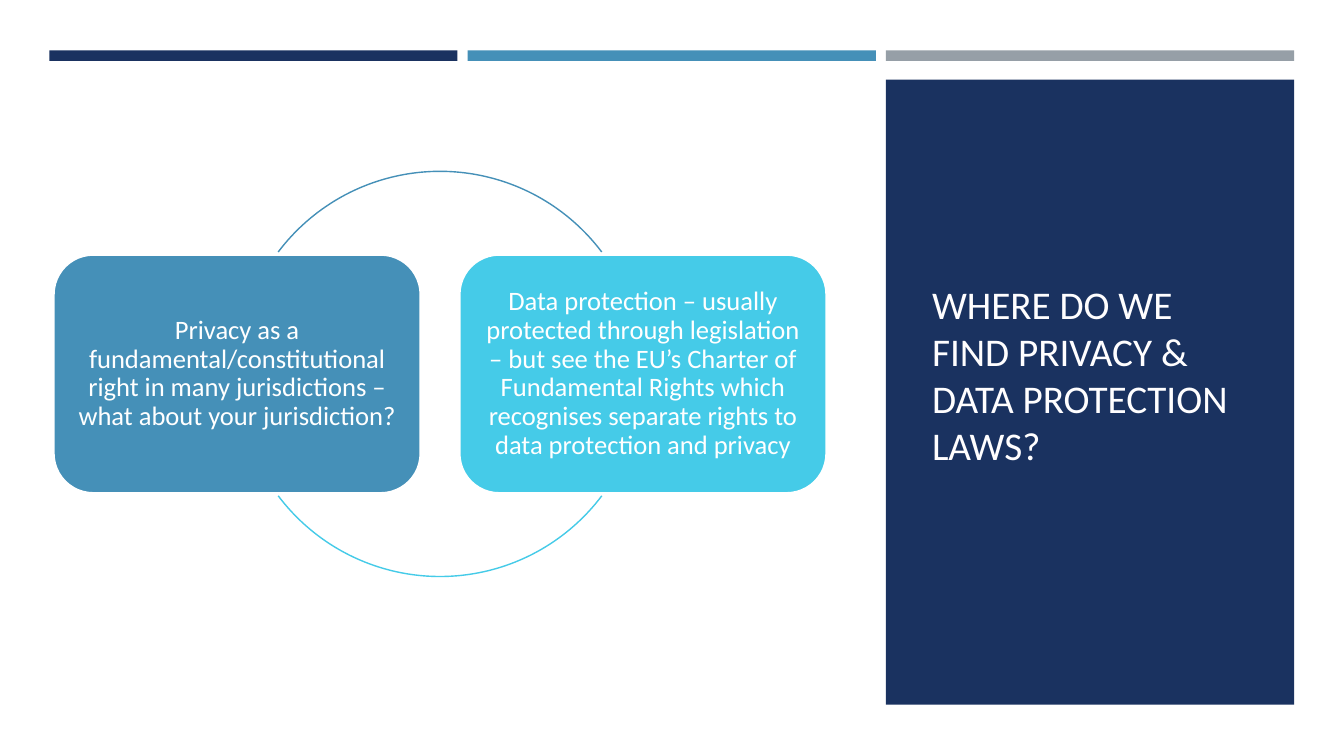
from dataclasses import dataclass

from pptx import Presentation
from pptx import util as u
from pptx.dml import color
from pptx.enum import shapes, text

Pt = u.Pt


@dataclass(frozen=True)
class Theme:
    navy: str = "1A3260"
    blue: str = "4590B8"
    cyan: str = "45CBE8"
    grey: str = "969FA7"
    white: str = "FFFFFF"
    title_color: str = "FFFEFF"
    font: str = "Calibri"
    title_size: float = 28
    card_size: float = 19


THEME = Theme()
PRIVACY = ("Privacy as a fundamental/constitutional right in many "
           "jurisdictions – what about your jurisdiction?")
DATA_PROTECTION = ("Data protection – usually protected through legislation – but see "
                   "the EU’s Charter of Fundamental Rights which recognises separate "
                   "rights to data protection and privacy")


@dataclass(frozen=True)
class Box:
    left: float
    top: float
    width: float
    height: float

    def lengths(self):
        return Pt(self.left), Pt(self.top), Pt(self.width), Pt(self.height)


def add_shape(slide, kind, box, fill=None, line=None, line_width=1.0):
    shape = slide.shapes.add_shape(kind, *box.lengths())
    shape.shadow.inherit = False
    if fill:
        shape.fill.solid()
        shape.fill.fore_color.rgb = color.RGBColor.from_string(fill)
    else:
        shape.fill.background()
    if line:
        shape.line.color.rgb = color.RGBColor.from_string(line)
        shape.line.width = Pt(line_width)
    else:
        shape.line.fill.background()
    return shape


def write(frame, words, size, ink, align, margin):
    frame.word_wrap = True
    frame.vertical_anchor = text.MSO_ANCHOR.MIDDLE
    frame.margin_left = frame.margin_right = Pt(margin)
    frame.margin_top = frame.margin_bottom = Pt(margin)
    paragraph = frame.paragraphs[0]
    paragraph.text = words
    paragraph.alignment = align
    paragraph.font.name = THEME.font
    paragraph.font.size = Pt(size)
    paragraph.font.color.rgb = color.RGBColor.from_string(ink)
    return paragraph


def add_top_bars(slide, box, gap=7.2):
    """Three equal bars across the top."""
    fills = (THEME.navy, THEME.blue, THEME.grey)
    width = (box.width - gap * (len(fills) - 1)) / len(fills)
    for i, fill in enumerate(fills):
        bar = Box(box.left + i * (width + gap), box.top, width, box.height)
        add_shape(slide, shapes.MSO_SHAPE.RECTANGLE, bar, fill)


def add_title_panel(slide, box):
    """Solid panel with the slide title."""
    add_shape(slide, shapes.MSO_SHAPE.RECTANGLE, box, THEME.navy)
    title_box = Box(box.left + 25.9, box.top + 25.2, 240.5, 370.8)
    title = slide.shapes.add_textbox(*title_box.lengths())
    write(title.text_frame, "WHERE DO WE FIND PRIVACY & DATA PROTECTION LAWS?",
          THEME.title_size, THEME.title_color, text.PP_ALIGN.LEFT, 7.2)


def add_cycle(slide, box, card_width=262.3, card_height=170.5):
    """Two cards joined by arcs of one circle."""
    circle = Box(box.left + (box.width - box.height) / 2, box.top,
                 box.height, box.height)
    card_top = box.top + (box.height - card_height) / 2
    card_step = box.width - card_width
    # Each arc runs clockwise between two angles in degrees
    parts = ((PRIVACY, THEME.blue, (217, 323)),
             (DATA_PROTECTION, THEME.cyan, (37, 143)))
    for i, (words, hue, angles) in enumerate(parts):
        card_box = Box(box.left + i * card_step, card_top, card_width, card_height)
        card = add_shape(slide, shapes.MSO_SHAPE.ROUNDED_RECTANGLE, card_box,
                         hue, THEME.white, 1.75)
        paragraph = write(card.text_frame, words, THEME.card_size, THEME.white,
                          text.PP_ALIGN.CENTER, 5.7)
        paragraph.line_spacing = 0.9

        arc = add_shape(slide, shapes.MSO_SHAPE.ARC, circle, line=hue)
        for end, angle in enumerate(angles):
            arc.adjustments[end] = angle * 0.6  # 60000 units a degree, over 100000


def main():
    deck = Presentation()
    deck.slide_width, deck.slide_height = Pt(960), Pt(540)
    slide = deck.slides.add_slide(deck.slide_layouts[6])
    add_top_bars(slide, Box(35.2, 36, 889.2, 7.5))
    add_title_panel(slide, Box(632.8, 56.9, 291.6, 446.4))
    add_cycle(slide, Box(38.2, 122.4, 552.2, 289.4))
    deck.save("out.pptx")


if __name__ == "__main__":
    main()
